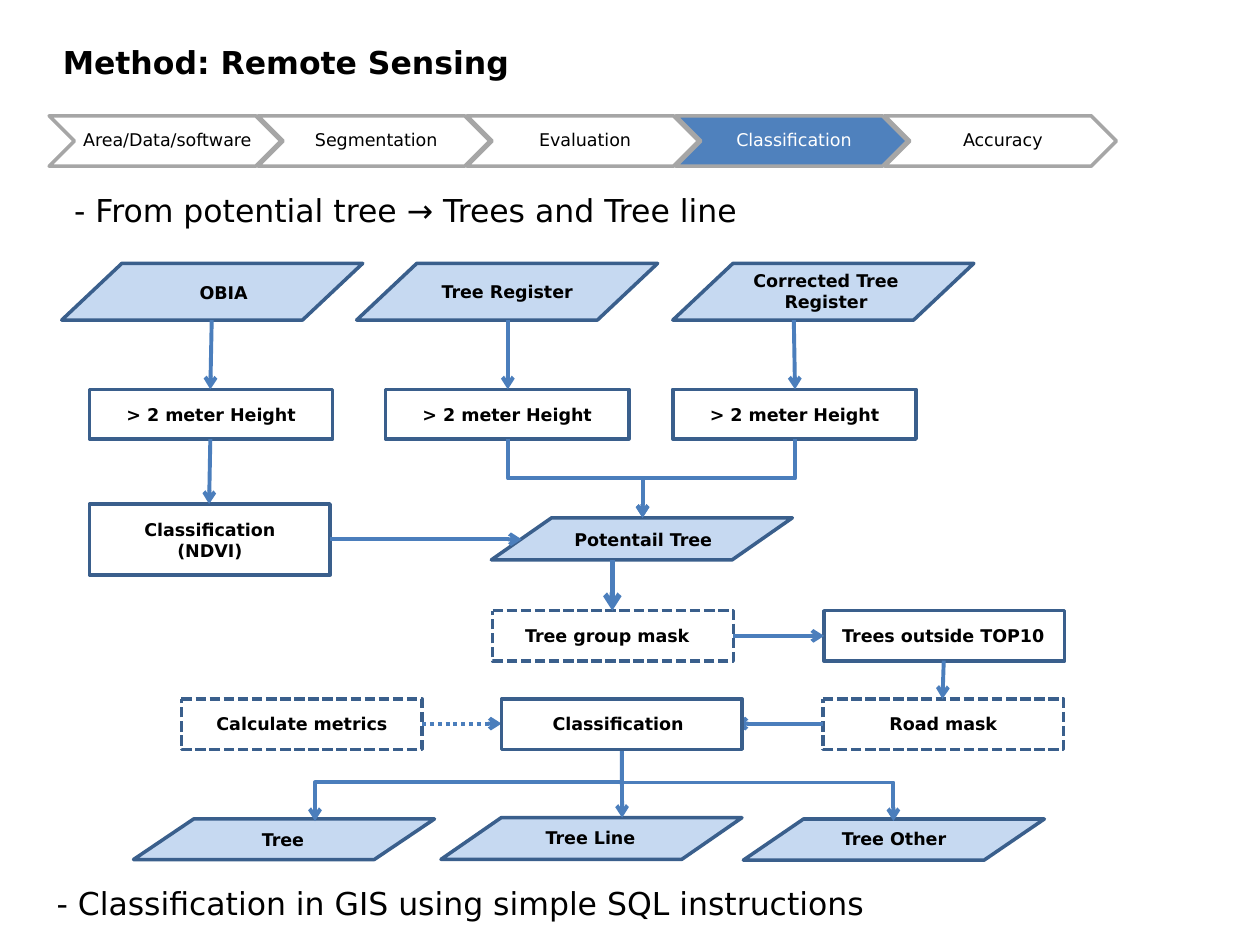
"""Build the remote sensing method slide as a flow chart."""
from pptx import Presentation
from pptx import util as u
from pptx.dml import color
from pptx.enum import dml, shapes, text
from pptx.oxml import ns, xmlchemy

FONT = "DejaVu Sans"
EDGE, ARROW, PALE, GREY = "3A5F8C", "4B7EBC", "C6D9F1", "A6A6A6"
DASH = dml.MSO_LINE.SQUARE_DOT
DOTS = dml.MSO_LINE.ROUND_DOT
BOX = shapes.MSO_SHAPE.FLOWCHART_PROCESS
DATA = shapes.MSO_SHAPE.FLOWCHART_DATA
STEPS = ["Area/Data/software", "Segmentation", "Evaluation", "Classification", "Accuracy"]


def rgb(code):
    """Turn a hex string into a colour."""
    return color.RGBColor.from_string(code)


def pts(*vals):
    """Turn numbers into point lengths."""
    return [u.Pt(val) for val in vals]


def write(slide, words, x, y, w, h, size=10, bold=False, ink="000000",
          mid=True, wrap=True, grow=True, pad=None, lead=None, after=None):
    """Add a text box holding one paragraph."""
    box = slide.shapes.add_textbox(*pts(x, y, w, h))
    frame = box.text_frame
    frame.word_wrap = wrap
    if grow:
        frame.auto_size = text.MSO_AUTO_SIZE.SHAPE_TO_FIT_TEXT
    else:
        frame.vertical_anchor = text.MSO_ANCHOR.MIDDLE
    if pad:
        (frame.margin_left, frame.margin_top,
         frame.margin_right, frame.margin_bottom) = pts(*pad)
    para = frame.paragraphs[0]
    para.alignment = text.PP_ALIGN.CENTER if mid else text.PP_ALIGN.LEFT
    if lead:
        para.line_spacing = lead
    if after:
        para.space_after = u.Pt(after)
    run = para.add_run()
    run.text = words
    run.font.name, run.font.size, run.font.bold = FONT, u.Pt(size), bold
    run.font.color.rgb = rgb(ink)


def draw(slide, kind, x, y, w, h, fill="FFFFFF", edge=EDGE, dash=None):
    """Add a filled and outlined preset shape."""
    form = slide.shapes.add_shape(kind, *pts(x, y, w, h))
    form.shadow.inherit = False
    form.fill.solid()
    form.fill.fore_color.rgb = rgb(fill)
    form.line.color.rgb = rgb(edge)
    form.line.width = u.Pt(2)
    if dash:
        form.line.dash_style = dash


def steps(slide, live):
    """Draw the chevron bar with one step lit."""
    for num, name in enumerate(STEPS):
        x, lit = 28.1 + 119.35 * num, name == live
        draw(slide, shapes.MSO_SHAPE.CHEVRON, x, 66.2, 132.5, 28.8,
             fill="4F81BD" if lit else "FFFFFF", edge=GREY)
        write(slide, name, x + 14.6, 66.2, 103.7, 28.8, grow=False, lead=0.9,
              after=3.5, pad=(2.9, 0.7, 0.7, 0.7), ink="FFFFFF" if lit else "000000")


def data(slide, name, x, y, h, left, top, wide=115.9, tall=18.7):
    """Add a data parallelogram and its label."""
    draw(slide, DATA, x, y, 172, h, fill=PALE)
    write(slide, name, left, top, wide, tall, bold=True)


def task(slide, name, x, y, w=137.5, h=28.8, dx=6.5, dy=4.7, wide=124.6,
         tall=18.7, dash=None):
    """Add a process box and its label."""
    draw(slide, BOX, x, y, w, h, dash=dash)
    write(slide, name, x + dx, y + dy, wide, tall, bold=True)


def finish(link, width=2.25, dash=None):
    """Style a connector and give it an arrowhead."""
    link.line.color.rgb = rgb(ARROW)
    link.line.width = u.Pt(width)
    if dash:
        link.line.dash_style = dash
    props = link.element.spPr
    tip = xmlchemy.OxmlElement("a:tailEnd")
    tip.set("type", "arrow")
    props.find(ns.qn("a:ln")).append(tip)
    props.append(xmlchemy.OxmlElement("a:effectLst"))


def arrow(slide, x1, y1, x2, y2, **style):
    """Add a straight arrow."""
    kind = shapes.MSO_CONNECTOR.STRAIGHT
    finish(slide.shapes.add_connector(kind, *pts(x1, y1, x2, y2)), **style)


def bend(slide, x1, y1, x2, y2, turn=0.5):
    """Add an elbow arrow that leaves and arrives vertically."""
    run, drop = abs(x2 - x1), y2 - y1
    left, top = (x1 + x2 - drop) / 2, (y1 + y2 - run) / 2
    ends = [left, left + drop]
    right = x2 > x1
    if right:
        ends.reverse()
    link = slide.shapes.add_connector(
        shapes.MSO_CONNECTOR.ELBOW, *pts(ends[0], top, ends[1], top + run))
    props = link.element.spPr
    props.find(ns.qn("a:xfrm")).set("rot", str((270 if right else 90) * 60000))
    guide = xmlchemy.OxmlElement("a:gd")
    guide.set("name", "adj1")
    guide.set("fmla", f"val {round(turn * 100000)}")
    geom = props.find(ns.qn("a:prstGeom"))
    geom.get_or_add_avLst().append(guide)
    finish(link)


def nodes(slide):
    """Draw the data and process nodes."""
    data(slide, "OBIA", 35.3, 150.5, 32.4, 61.9, 157.7, 131.8)
    data(slide, "Tree Register", 203.8, 150.5, 32.4, 223.9, 157, 131.8)
    data(slide, "Corrected Tree Register", 384.5, 150.5, 32.4, 414, 150.5, tall=30.2)
    data(slide, "Potentail Tree", 280.8, 295.9, 24, 309.6, 298.8)
    for x in (51.1, 220.3, 384.5):
        task(slide, "> 2 meter Height", x, 222.5, w=139, h=28.4, dx=7.2)
    task(slide, "Classification (NDVI)", 51.1, 288, h=40.5, dy=5, tall=31.7)
    task(slide, "Trees outside TOP10", 470.9, 349, dx=0, wide=136.1)
    task(slide, "Calculate metrics", 103.7, 399.4, dash=DASH)
    task(slide, "Tree group mask", 281.5, 349, dx=0.7, wide=129.6, dash=DASH)
    task(slide, "Road mask", 470.2, 399.4, dx=20.9, wide=95.8, dash=DASH)
    data(slide, "Tree", 76.3, 468, 23.2, 103.7, 470.2)
    data(slide, "Tree Line", 252, 467.3, 23.8, 279.4, 469.1)
    data(slide, "Tree Other", 424.8, 468, 23.5, 452.9, 469.6)


def links(slide):
    """Draw the arrows between nodes."""
    arrow(slide, 121, 182.9, 120.2, 222.5)
    arrow(slide, 290.2, 182.9, 290.2, 222.5)
    arrow(slide, 453.6, 182.9, 454.3, 222.5)
    arrow(slide, 120.2, 250.9, 119.5, 288)
    arrow(slide, 188.6, 308.2, 298.1, 308.2)
    arrow(slide, 349.9, 320.2, 349.9, 349, width=3)
    arrow(slide, 419, 363.4, 470.9, 363.4)
    arrow(slide, 539.3, 377.5, 538.6, 399.4)
    arrow(slide, 470.2, 413.5, 419.8, 413.5)
    arrow(slide, 241.2, 413.5, 286.6, 413.5, dash=DOTS)
    arrow(slide, 355.3, 428, 355.5, 467.3)
    for x in (290.2, 454.3):
        bend(slide, x, 250.9, 367.2, 295.9)
    bend(slide, 355.3, 429, 180, 469.2, turn=0.45)
    bend(slide, 355.3, 427.7, 510.5, 469.2, turn=0.47)


def main():
    """Assemble the slide and save it."""
    deck = Presentation()
    deck.slide_width, deck.slide_height = pts(720, 540)
    slide = deck.slides.add_slide(deck.slide_layouts[6])
    write(slide, "Method: Remote Sensing", 28.8, 20.9, 623.5, 29, size=18,
          bold=True, mid=False)
    steps(slide, "Classification")
    nodes(slide)
    links(slide)
    task(slide, "Classification", 286.6, 399.4, dx=4.3)
    write(slide, "- Classification in GIS using simple SQL instructions",
          25.2, 501.8, 503.3, 29, size=18, mid=False, wrap=False)
    write(slide, "- From potential tree → Trees and Tree line",
          35.3, 105.8, 415.4, 29, size=18, mid=False, wrap=False)
    deck.save("out.pptx")


if __name__ == "__main__":
    main()
